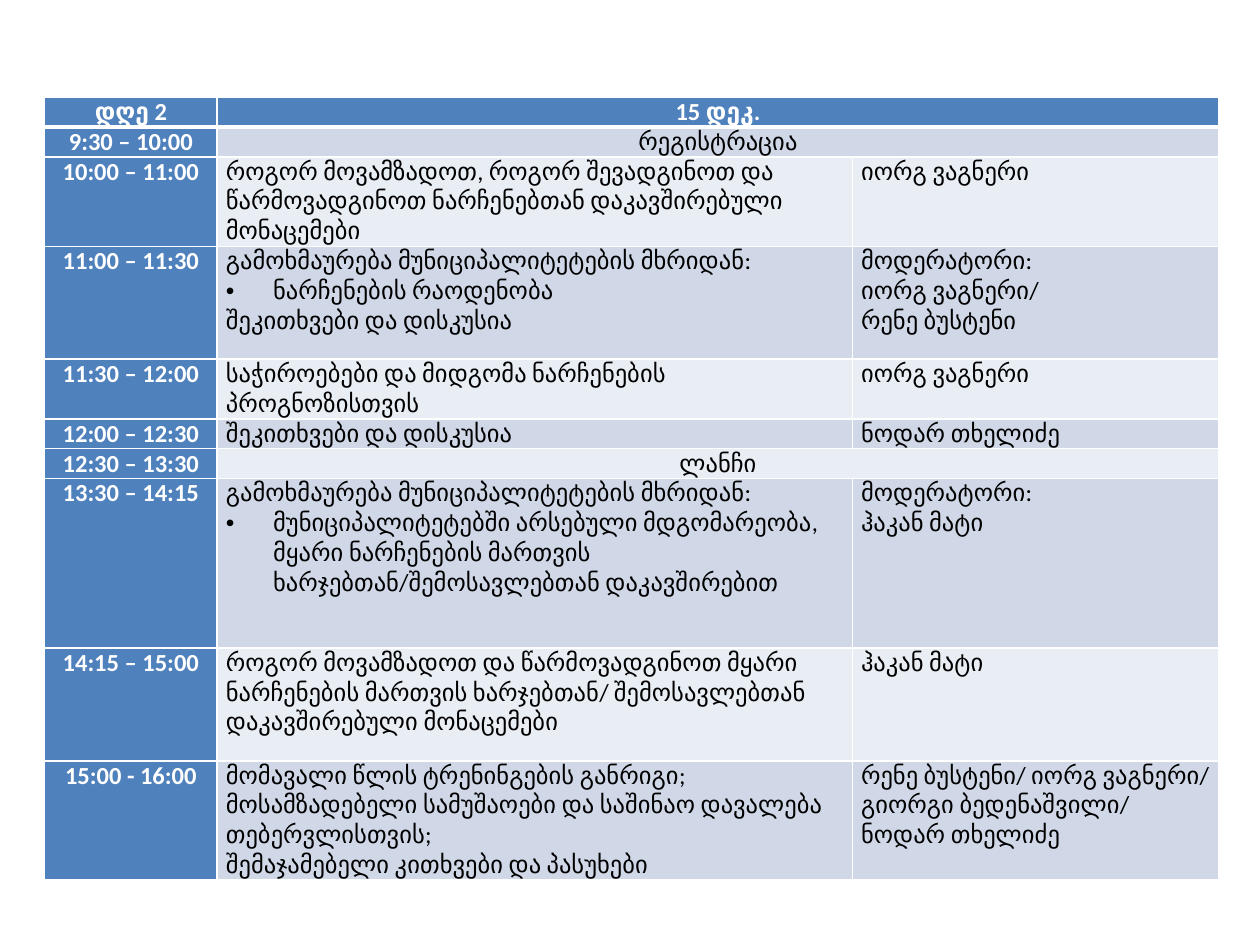
from dataclasses import dataclass

from lxml.etree import SubElement
from pptx import Presentation
from pptx.dml.color import RGBColor
from pptx.enum.text import PP_ALIGN
from pptx.oxml.ns import qn
from pptx.table import Table, _Cell
from pptx.util import Pt

COLORS = {
    "accent": "4F81BD",
    "dark_band": "D0D8E8",
    "light_band": "E9EDF4",
    "border": "FFFFFF",
    "heading": "FFFFFF",
    "body": "000000",
}
FONT_NAME = "Calibri"
FONT_SIZE = 14
BULLET = "•"
BULLET_INDENT = Pt(27)
COLUMN_WIDTHS = (98.6, 363, 209.4)


@dataclass
class Session:
    height: float
    time: str
    topic: str
    speaker: str | None = None


SESSIONS = (
    Session(16, "დღე 2", "15 დეკ."),
    Session(16, "9:30 – 10:00", "რეგისტრაცია"),
    Session(
        48,
        "10:00 – 11:00",
        "როგორ მოვამზადოთ, როგორ შევადგინოთ და წარმოვადგინოთ ნარჩენებთან "
        "დაკავშირებული მონაცემები",
        "იორგ ვაგნერი",
    ),
    Session(
        64.5,
        "11:00 – 11:30",
        "გამოხმაურება მუნიციპალიტეტების მხრიდან:\n•ნარჩენების რაოდენობა\n"
        "შეკითხვები და დისკუსია",
        "მოდერატორი: \vიორგ ვაგნერი/ \vრენე ბუსტენი",
    ),
    Session(
        32.3,
        "11:30 – 12:00",
        "საჭიროებები და მიდგომა ნარჩენების პროგნოზისთვის",
        "იორგ ვაგნერი",
    ),
    Session(16, "12:00 – 12:30", "შეკითხვები და დისკუსია", "ნოდარ თხელიძე"),
    Session(16, "12:30 – 13:30", "ლანჩი"),
    Session(
        96.8,
        "13:30 – 14:15",
        "გამოხმაურება მუნიციპალიტეტების მხრიდან:\n"
        "•მუნიციპალიტეტებში არსებული მდგომარეობა, მყარი ნარჩენების მართვის "
        "ხარჯებთან/შემოსავლებთან დაკავშირებით",
        "მოდერატორი: \vჰაკან მატი",
    ),
    Session(
        64.5,
        "14:15 – 15:00",
        "როგორ მოვამზადოთ და წარმოვადგინოთ მყარი ნარჩენების მართვის "
        "ხარჯებთან/ შემოსავლებთან დაკავშირებული მონაცემები",
        "ჰაკან მატი",
    ),
    Session(
        64.5,
        "15:00 - 16:00",
        "მომავალი წლის ტრენინგების განრიგი;\n"
        "მოსამზადებელი სამუშაოები და საშინაო დავალება თებერვლისთვის;\n"
        "შემაჯამებელი კითხვები და პასუხები",
        "რენე ბუსტენი/ იორგ ვაგნერი/ გიორგი ბედენაშვილი/ ნოდარ თხელიძე",
    ),
)


def style_cell(cell: _Cell, fill: str, top: float, bottom: float) -> None:
    properties = cell._tc.get_or_add_tcPr()
    for side, width in {"lnL": 1, "lnR": 1, "lnT": top, "lnB": bottom}.items():
        line = SubElement(properties, qn(f"a:{side}"), w=str(Pt(width)))
        solid_fill = SubElement(line, qn("a:solidFill"))
        SubElement(solid_fill, qn("a:srgbClr"), val=COLORS["border"])
    cell.fill.solid()
    cell.fill.fore_color.rgb = RGBColor.from_string(COLORS[fill])
    cell.margin_left = cell.margin_right = Pt(5)
    cell.margin_top = cell.margin_bottom = Pt(0)


def write_cell(cell: _Cell, text: str, heading: bool, centered: bool) -> None:
    cell.text_frame.text = text.replace(BULLET, "")
    for paragraph, line in zip(cell.text_frame.paragraphs, text.split("\n")):
        paragraph.alignment = PP_ALIGN.CENTER if centered else PP_ALIGN.LEFT
        if line.startswith(BULLET):
            properties = paragraph._p.get_or_add_pPr()
            properties.set("marL", str(BULLET_INDENT))
            properties.set("indent", str(-BULLET_INDENT))
            SubElement(properties, qn("a:buFont"), typeface="Arial")
            SubElement(properties, qn("a:buChar"), char=BULLET)
        for line_break in paragraph._p.findall(qn("a:br")):
            SubElement(line_break, qn("a:rPr"), sz=str(FONT_SIZE * 100))
        for run in paragraph.runs:
            run.font.name = FONT_NAME
            run.font.size = Pt(FONT_SIZE)
            run.font.bold = heading
            color = COLORS["heading" if heading else "body"]
            run.font.color.rgb = RGBColor.from_string(color)


def fill_row(table: Table, index: int, session: Session) -> None:
    table.rows[index].height = Pt(session.height)
    is_header = index == 0
    band = "dark_band" if index % 2 else "light_band"
    for column in range(len(COLUMN_WIDTHS)):
        fill = "accent" if is_header or column == 0 else band
        top = 3 if index == 1 else 1
        bottom = 3 if is_header else 1
        style_cell(table.cell(index, column), fill, top, bottom)
    time_cell, topic_cell, speaker_cell = table.rows[index].cells
    write_cell(time_cell, session.time, True, True)
    write_cell(topic_cell, session.topic, is_header, session.speaker is None)
    if session.speaker is None:
        topic_cell.merge(speaker_cell)
    else:
        write_cell(speaker_cell, session.speaker, False, False)


def main() -> None:
    presentation = Presentation()
    presentation.slide_width = Pt(720)
    presentation.slide_height = Pt(540)
    slide = presentation.slides.add_slide(presentation.slide_layouts[6])
    table = slide.shapes.add_table(
        len(SESSIONS),
        len(COLUMN_WIDTHS),
        Pt(25.5),
        Pt(55.5),
        Pt(sum(COLUMN_WIDTHS)),
        Pt(sum(session.height for session in SESSIONS)),
    ).table
    for column, width in zip(table.columns, COLUMN_WIDTHS):
        column.width = Pt(width)
    for index, session in enumerate(SESSIONS):
        fill_row(table, index, session)
    presentation.save("out.pptx")


if __name__ == "__main__":
    main()
